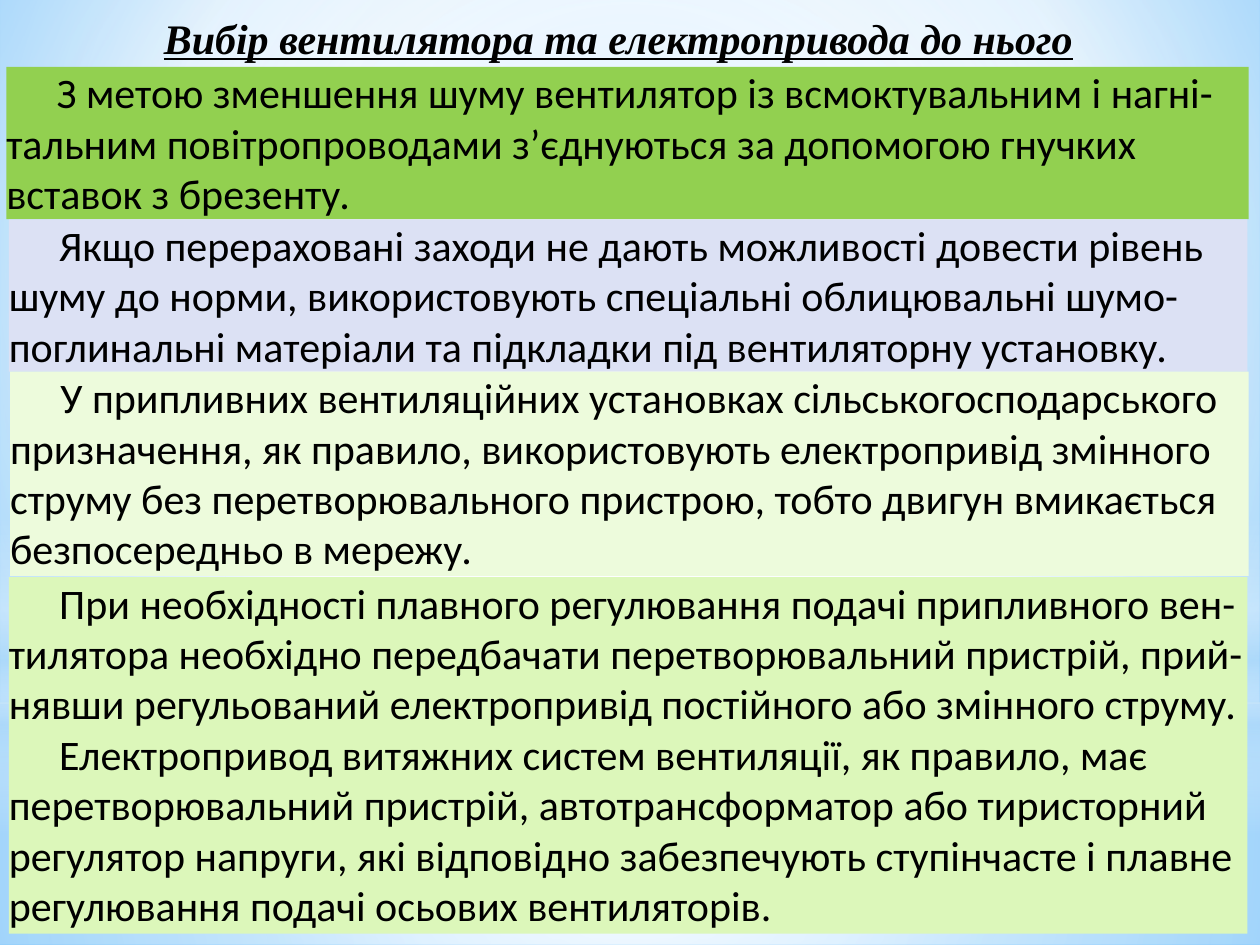
"""Build a slide on choosing a fan and its electric drive."""
from dataclasses import dataclass
from typing import Optional

from lxml.etree import SubElement
from pptx import Presentation
from pptx.dml.color import RGBColor
from pptx.enum.shapes import MSO_SHAPE
from pptx.enum.text import MSO_ANCHOR, PP_ALIGN
from pptx.oxml import parse_xml
from pptx.oxml.ns import nsdecls, qn
from pptx.util import Inches, Pt

HUES = {
    "black": "000000", "white": "FFFFFF", "sky": "9ED5FF", "blue": "5BB9FF",
    "pale": "B4DCFA", "green": "92D050", "lilac": "DCE1F4",
    "cream": "EDFBDC", "lime": "DCF7BA",
}
MID = (50, 50, 50, 50)


@dataclass
class Fade:
    stops: list[tuple[int, str, int]]
    focus: Optional[tuple[int, int, int, int]] = MID


@dataclass
class Glow:
    box: tuple[float, float, float, float]
    fade: Fade
    kind: MSO_SHAPE = MSO_SHAPE.RECTANGLE


@dataclass
class Panel:
    box: tuple[float, float, float, float]
    hue: str
    texts: list[str]


SKY = Fade([(0, "sky", 100), (60, "white", 100), (100, "blue", 100)],
           (20, 10, 20, 60))
GLOWS = [
    Glow((0, 5.58, 10, 1.92),
         Fade([(0, "white", 91), (37, "white", 76), (100, "pale", 79)])),
    Glow((0, 0, 10, 5.58),
         Fade([(0, "white", 89), (48, "white", 62), (100, "pale", 79)])),
    Glow((0, 4.12, 10, 2.5),
         Fade([(0, "white", 0), (29, "white", 30), (45, "pale", 40),
               (55, "white", 26), (65, "pale", 60), (100, "white", 0)], None)),
    Glow((0, 1.75, 10, 5.58),
         Fade([(0, "white", 100), (56, "white", 0)]), MSO_SHAPE.OVAL),
]
PANELS = [
    Panel((0.05, 0.53, 9.86, 1.21), "green", [
        "З метою зменшення шуму вентилятор із всмоктувальним і нагні-тальним "
        "повітропроводами з’єднуються за допомогою гнучких вставок з брезенту."]),
    Panel((0.07, 1.74, 9.83, 1.21), "lilac", [
        "Якщо перераховані заходи не дають можливості довести рівень шуму до "
        "норми, використовують спеціальні облицювальні шумо-поглинальні "
        "матеріали та підкладки під вентиляторну установку."]),
    Panel((0.08, 2.95, 9.83, 1.62), "cream", [
        "У припливних вентиляційних установках сільськогосподарського "
        "призначення, як правило, використовують електропривід змінного струму "
        "без перетворювального пристрою, тобто двигун вмикається безпосередньо "
        "в мережу."]),
    Panel((0.07, 4.58, 9.83, 2.83), "lime", [
        "При необхідності плавного регулювання подачі припливного вен-тилятора "
        "необхідно передбачати перетворювальний пристрій, прий-нявши "
        "регульований електропривід постійного або змінного струму.",
        "Електропривод витяжних систем вентиляції, як правило, має "
        "перетворювальний пристрій, автотрансформатор або тиристорний регулятор "
        "напруги, які відповідно забезпечують ступінчасте і плавне регулювання "
        "подачі осьових вентиляторів."]),
]


def paint(owner, fill, fade: Fade) -> None:
    """Give the owner of a fill a gradient."""
    fill.background()
    grad = parse_xml(f'<a:gradFill {nsdecls("a")} rotWithShape="1"/>')
    stops = SubElement(grad, qn("a:gsLst"))
    for pos, hue, alpha in fade.stops:
        stop = SubElement(stops, qn("a:gs"), pos=str(pos * 1000))
        tint = SubElement(stop, qn("a:srgbClr"), val=HUES[hue])
        SubElement(tint, qn("a:alpha"), val=str(alpha * 1000))
    if fade.focus:
        route = SubElement(grad, qn("a:path"), path="circle")
        sides = {side: str(part * 1000) for side, part in zip("ltrb", fade.focus)}
        SubElement(route, qn("a:fillToRect"), **sides)
    else:
        SubElement(grad, qn("a:lin"), ang="5400000", scaled="0")
    blank = owner.element.xpath(".//a:noFill")[0]
    blank.getparent().replace(blank, grad)


def add_form(slide, kind: MSO_SHAPE, box: tuple):
    """Add a shape without line or shadow."""
    form = slide.shapes.add_shape(kind, *map(Inches, box))
    form.shadow.inherit = False
    form.line.fill.background()
    return form


def write(frame, texts: list[str], face: str, indent: float = 0) -> None:
    """Fill a text frame without margins."""
    frame.margin_left = frame.margin_right = 0
    frame.margin_top = frame.margin_bottom = 0
    frame.vertical_anchor = MSO_ANCHOR.TOP
    for num, text in enumerate(texts):
        para = frame.add_paragraph() if num else frame.paragraphs[0]
        para.text = text
        para.alignment = PP_ALIGN.LEFT
        para.font.name = face
        para.font.size = Pt(24)
        para.font.color.rgb = RGBColor.from_string(HUES["black"])
        if indent:
            para._p.get_or_add_pPr().set("indent", str(Inches(indent)))


def add_title(slide, text: str) -> None:
    """Add the underlined heading."""
    box = slide.shapes.add_textbox(*map(Inches, (1.3, 0.1, 7.29, 0.4)))
    frame = box.text_frame
    frame.word_wrap = False
    write(frame, [text], "Times New Roman")
    font = frame.paragraphs[0].font
    font.bold = font.italic = font.underline = True


def add_panel(slide, panel: Panel) -> None:
    """Add a coloured block of indented text."""
    form = add_form(slide, MSO_SHAPE.RECTANGLE, panel.box)
    form.fill.solid()
    form.fill.fore_color.rgb = RGBColor.from_string(HUES[panel.hue])
    form.text_frame.word_wrap = True
    write(form.text_frame, panel.texts, "Calibri", 0.4)


def main() -> None:
    """Build and save the slide."""
    deck = Presentation()
    deck.slide_width, deck.slide_height = Inches(10), Inches(7.5)
    slide = deck.slides.add_slide(deck.slide_layouts[6])
    paint(slide, slide.background.fill, SKY)
    for glow in GLOWS:
        form = add_form(slide, glow.kind, glow.box)
        paint(form, form.fill, glow.fade)
    add_title(slide, "Вибір вентилятора та електропривода до нього")
    for panel in PANELS:
        add_panel(slide, panel)
    deck.save("out.pptx")


if __name__ == "__main__":
    main()
